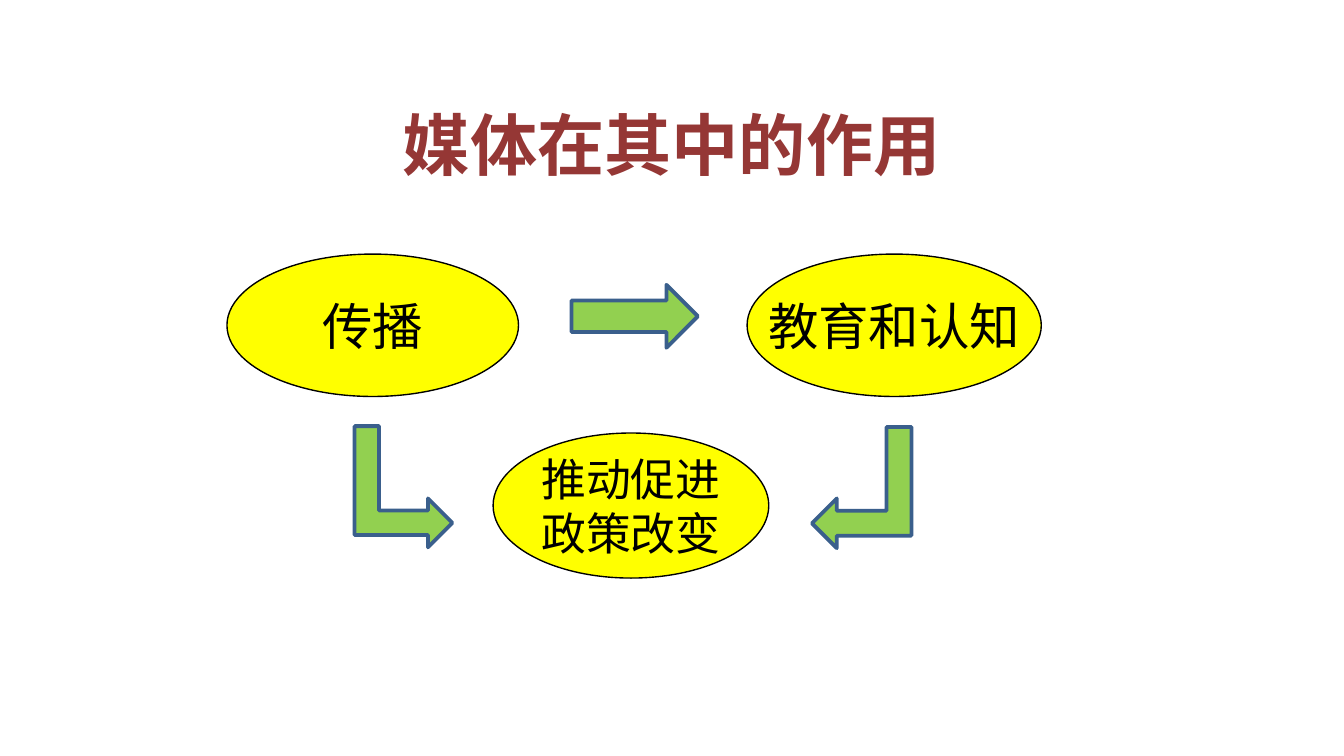
from pptx import Presentation
from pptx.dml.color import RGBColor
from pptx.enum.shapes import MSO_SHAPE
from pptx.enum.text import MSO_ANCHOR, PP_ALIGN
from pptx.oxml.ns import qn
from pptx.util import Cm, Pt

OVAL, RIGHT_ARROW, BENT_ARROW = MSO_SHAPE.OVAL, MSO_SHAPE.RIGHT_ARROW, MSO_SHAPE.BENT_UP_ARROW
TOP, MIDDLE = MSO_ANCHOR.TOP, MSO_ANCHOR.MIDDLE
CENTER = PP_ALIGN.CENTER

FONT = "Noto Sans CJK SC"
BLACK = RGBColor(0x00, 0x00, 0x00)
DARK_RED = RGBColor(0x95, 0x37, 0x35)
YELLOW = RGBColor(0xFF, 0xFF, 0x00)
GREEN = RGBColor(0x92, 0xD0, 0x50)
STEEL_BLUE = RGBColor(0x3A, 0x5F, 0x8C)


def write_text(frame, text, size, color=BLACK, bold=False, anchor=MIDDLE, wrap=False):
    """Fill the frame with one centred paragraph per line of text."""
    frame.text = text
    frame.word_wrap = wrap
    frame.vertical_anchor = anchor
    for paragraph in frame.paragraphs:
        paragraph.alignment = CENTER
        for run in paragraph.runs:
            font = run.font
            font.name, font.size, font.bold = FONT, Pt(size), bold
            font.color.rgb = color
            east_asian = run._r.get_or_add_rPr().makeelement(qn("a:ea"), {"typeface": FONT})
            font._element.find(qn("a:latin")).addnext(east_asian)


def add_filled_shape(slide, kind, box, fill, line, line_width):
    shape = slide.shapes.add_shape(kind, *map(Cm, box))
    shape.shadow.inherit = False
    shape.fill.solid()
    shape.fill.fore_color.rgb = fill
    shape.line.color.rgb = line
    shape.line.width = Pt(line_width)
    return shape


def place_title(slide, box, text):
    title = slide.shapes.title
    title.left, title.top, title.width, title.height = map(Cm, box)
    write_text(title.text_frame, text, 36, DARK_RED, bold=True, anchor=TOP, wrap=True)


def add_role(slide, box, text, size):
    oval = add_filled_shape(slide, OVAL, box, YELLOW, BLACK, 0.75)
    frame = oval.text_frame
    frame.margin_left = frame.margin_right = Cm(0.18)
    frame.margin_top = frame.margin_bottom = Cm(0.1)
    write_text(frame, text, size)


def add_flow_arrow(slide, kind, box, rotation=0, mirrored=False):
    arrow = add_filled_shape(slide, kind, box, GREEN, STEEL_BLUE, 2)
    arrow.rotation = rotation
    if mirrored:
        arrow._element.spPr.xfrm.set("flipV", "1")


def add_role_diagram(slide, left, top):
    """Two roles side by side, both leading to the result below."""
    lower = top + 3.47
    add_role(slide, (left, top, 5.51, 2.69), "传播", 27)
    add_flow_arrow(slide, RIGHT_ARROW, (left + 6.51, top + 0.58, 2.39, 1.19))
    add_role(slide, (left + 9.83, top, 5.56, 2.69), "教育和认知", 27)
    add_flow_arrow(slide, BENT_ARROW, (left + 10.85, lower, 2.29, 1.88), 90, mirrored=True)
    add_flow_arrow(slide, BENT_ARROW, (left + 2.19, lower, 2.29, 1.85), 90)
    add_role(slide, (left + 5.03, top + 3.38, 5.21, 2.74), "推动促进\n政策改变", 24)


def main():
    deck = Presentation()
    deck.slide_width, deck.slide_height = Cm(25.4), Cm(14.28)
    slide = deck.slides.add_slide(deck.slide_layouts[5])
    place_title(slide, (1.9, 1.83, 21.59, 11.18), "媒体在其中的作用")
    add_role_diagram(slide, 4.29, 4.8)
    deck.save("out.pptx")


if __name__ == "__main__":
    main()
